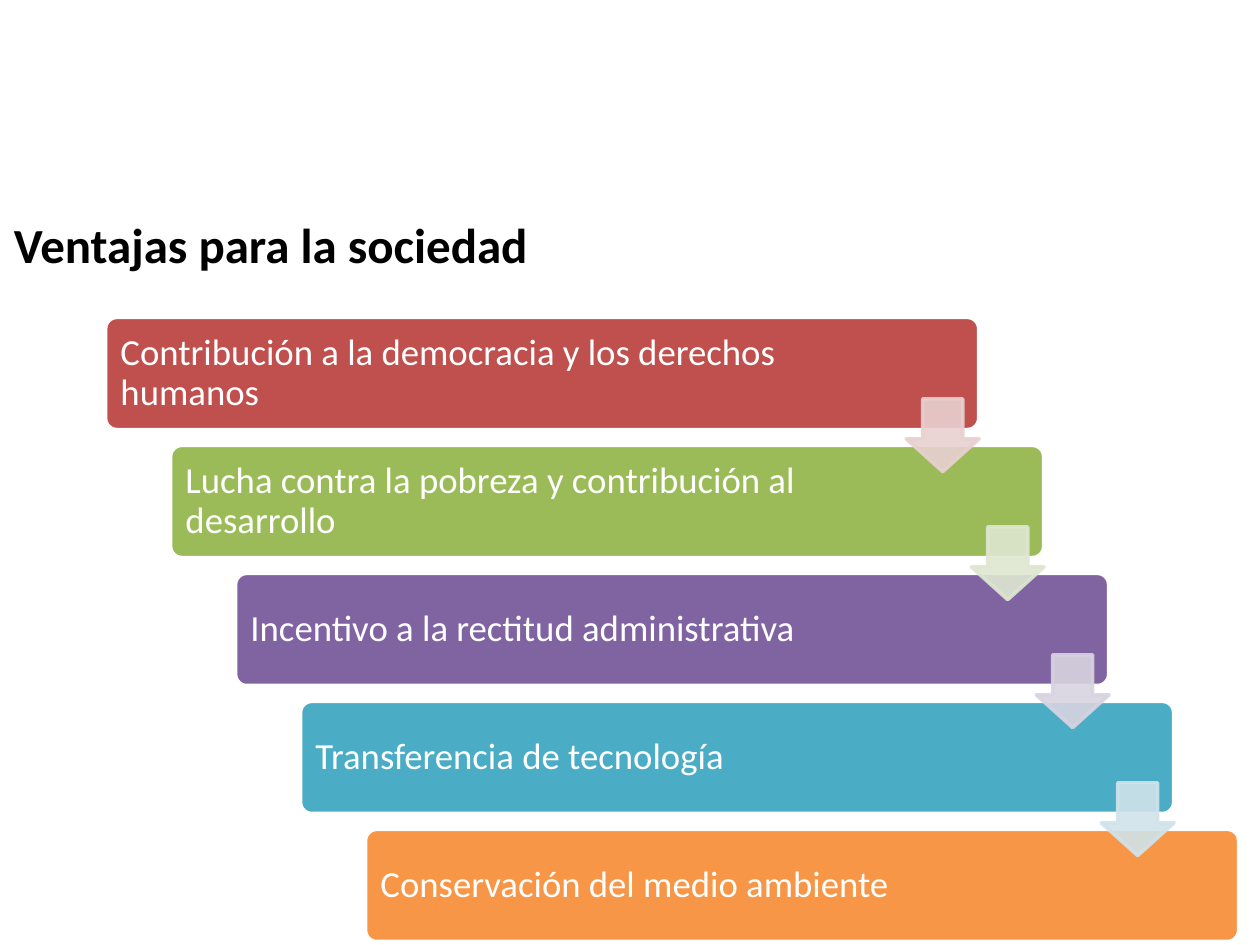
from lxml.etree import SubElement
from pptx import Presentation
from pptx.dml.color import RGBColor
from pptx.enum.shapes import MSO_SHAPE
from pptx.enum.text import MSO_ANCHOR, PP_ALIGN
from pptx.oxml.ns import qn
from pptx.util import Cm, Pt

FONT = "Calibri"
WHITE = "FFFFFF"

# Advantage, bar colour, colour of the arrow to the next bar
ADVANTAGES = [
    ("Contribución a la democracia y los derechos humanos", "C0504D", "E8D0D0"),
    ("Lucha contra la pobreza y contribución al desarrollo", "9BBB59", "DEE7D1"),
    ("Incentivo a la rectitud administrativa", "8064A2", "D8D3E0"),
    ("Transferencia de tecnología", "4BACC6", "D0E3EA"),
    ("Conservación del medio ambiente", "F79646", None),
]

# Staircase geometry in centimetres
STEP_X, STEP_Y = 1.31, 2.58
BAR_X, BAR_Y, BAR_W, BAR_H = 2.13, 6.4, 17.6, 2.26
LABEL_GAP = 0.07
FIRST_LABEL_W, LABEL_W = 14.88, 14.68
ARROW_X, ARROW_Y, ARROW_SIZE = 18.27, 8.04, 1.47


def color(hex_string):
    return RGBColor.from_string(hex_string)


def add_text(shapes, box, text, size, hex_color, bold=False, inset=None, spacing=None):
    frame = shapes.add_textbox(*map(Cm, box)).text_frame
    frame.word_wrap = True
    frame.vertical_anchor = MSO_ANCHOR.MIDDLE
    if inset is not None:
        frame.margin_left = frame.margin_right = Cm(inset)
        frame.margin_top = frame.margin_bottom = Cm(inset)
    paragraph = frame.paragraphs[0]
    paragraph.alignment = PP_ALIGN.LEFT
    if spacing is not None:
        paragraph.line_spacing = spacing
    run = paragraph.add_run()
    run.text = text
    run.font.name = FONT
    run.font.size = Pt(size)
    run.font.bold = bold
    run.font.color.rgb = color(hex_color)


def add_block(shapes, preset, box, adjustments, fill, line):
    block = shapes.add_shape(preset, *map(Cm, box))
    for index, value in enumerate(adjustments):
        block.adjustments[index] = value
    block.shadow.inherit = False
    block.fill.solid()
    block.fill.fore_color.rgb = color(fill)
    block.line.color.rgb = color(line)
    block.line.width = Pt(2)
    return block


def add_bar(shapes, step, text, fill):
    left, top = BAR_X + step * STEP_X, BAR_Y + step * STEP_Y
    add_block(shapes, MSO_SHAPE.ROUNDED_RECTANGLE, (left, top, BAR_W, BAR_H),
              [0.1], fill, WHITE)
    width = LABEL_W if step else FIRST_LABEL_W
    label_box = (left + LABEL_GAP, top + LABEL_GAP, width, BAR_H - 2 * LABEL_GAP)
    add_text(shapes, label_box, text, 21, WHITE, inset=0.23, spacing=0.9)


def add_arrow(shapes, step, tint):
    box = (ARROW_X + step * STEP_X, ARROW_Y + step * STEP_Y, ARROW_SIZE, ARROW_SIZE)
    # Preset order: head length, then shaft width
    arrow = add_block(shapes, MSO_SHAPE.DOWN_ARROW, box, [0.55, 0.45], tint, tint)
    # 90 % opacity on fill and outline
    for rgb in arrow.element.spPr.iter(qn("a:srgbClr")):
        SubElement(rgb, qn("a:alpha"), val="90000")


def main():
    prs = Presentation()
    prs.slide_width, prs.slide_height = Cm(25.4), Cm(19.05)
    slide = prs.slides.add_slide(prs.slide_layouts[6])

    # Title
    add_text(slide.shapes, (0.03, 3.33, 22.86, 3.18),
             "Ventajas para la sociedad", 28, "000000", bold=True)

    # Staircase of bars, with the linking arrows in front
    staircase = slide.shapes.add_group_shape().shapes
    for step, (text, fill, _) in enumerate(ADVANTAGES):
        add_bar(staircase, step, text, fill)
    for step, (_, _, tint) in enumerate(ADVANTAGES[:-1]):
        add_arrow(staircase, step, tint)

    prs.save("out.pptx")


if __name__ == "__main__":
    main()
